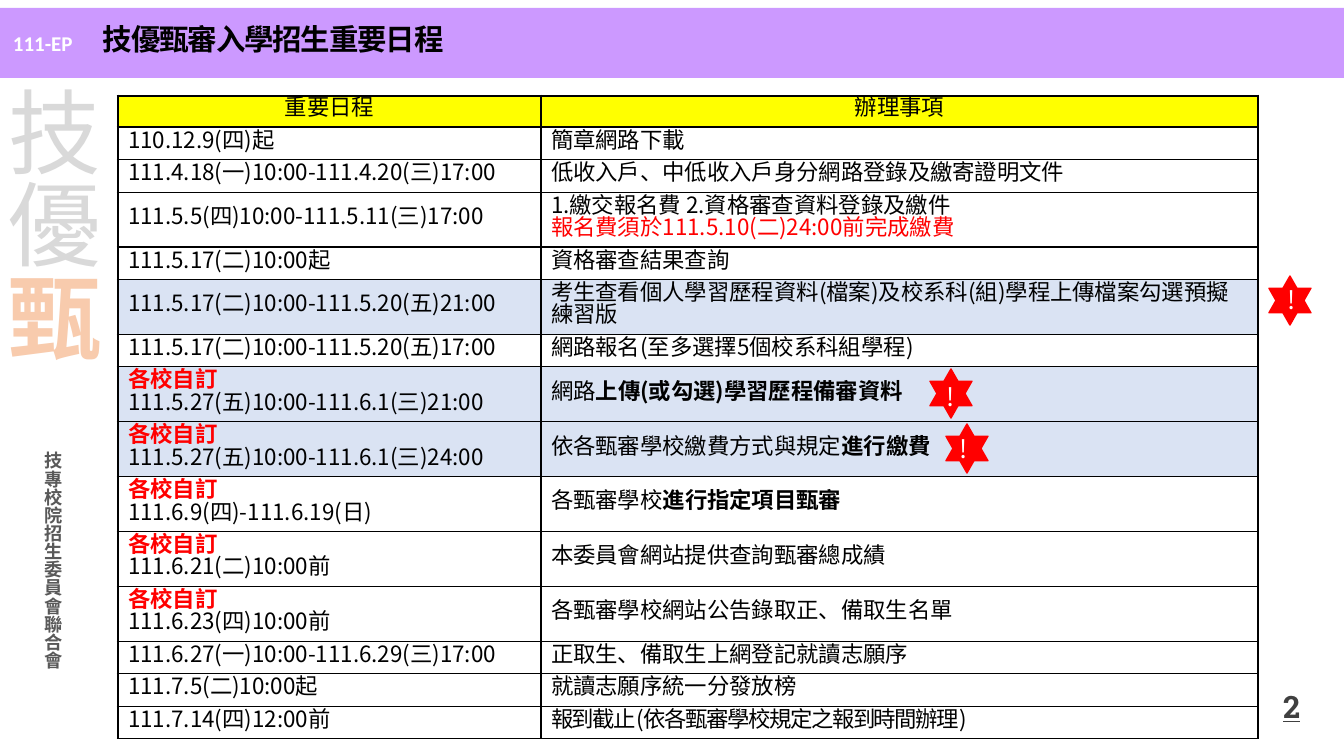
from pptx import Presentation
from pptx.dml.color import RGBColor
from pptx.enum.shapes import MSO_SHAPE as Shape
from pptx.enum.text import MSO_ANCHOR as Anchor, PP_ALIGN as Align
from pptx.oxml.ns import qn
from pptx.util import Emu, Pt
from lxml.etree import SubElement

PX = 914400 / 100.8
CJK = "Noto Sans CJK SC"
THEME = {
    "purple": "CC99FF", "yellow": "FFFF00", "white": "FFFFFF",
    "shaded": "DAE3F3", "red": "FF0000", "black": "000000",
    "thin": 1, "thick": 2.25,
    "text": {
        "code": dict(name="Calibri", size=Pt(15), bold=True, color="FFFFFF"),
        "title": dict(name=CJK, size=Pt(21), bold=True, color="000000", spacing=-80),
        "faded": dict(name=CJK, size=Pt(66), bold=False, color="D9D9D9"),
        "accent": dict(name=CJK, size=Pt(66), bold=True, color="F8CBAD"),
        "issuer": dict(name="Noto Sans CJK JP", size=Pt(13), bold=True, color="595959"),
        "number": dict(name="Roboto Slab", size=Pt(22), bold=True, underline=True,
                       color="404040"),
        "mark": dict(name=CJK, size=Pt(18), bold=False, color="FFFFFF"),
        "plain": dict(name=CJK, size=Pt(16), bold=False, color="000000"),
        "strong": dict(name=CJK, size=Pt(16), bold=True, color="000000"),
        "notice": dict(name=CJK, size=Pt(16), bold=False, color="FF0000"),
        "alert": dict(name=CJK, size=Pt(16), bold=True, color="FF0000"),
        "tight": dict(name=CJK, size=Pt(16), bold=False, color="000000", spacing=-100),
    },
}

# A paragraph is a list of (text, style) spans; a cell is a list of paragraphs.
HEADER = ("重要日程", "辦理事項")
SCHOOL_SET = [("各校自訂", "alert")]
SCHEDULE = [
    ("110.12.9(四)起", False, [[("簡章網路下載", "plain")]]),
    ("111.4.18(一)10:00-111.4.20(三)17:00", False,
     [[("低收入戶、中低收入戶身分網路登錄及繳寄證明文件", "plain")]]),
    ("111.5.5(四)10:00-111.5.11(三)17:00", False,
     [[("1.繳交報名費 2.資格審查資料登錄及繳件", "plain")],
      [("報名費須於111.5.10(二)24:00前完成繳費", "notice")]]),
    ("111.5.17(二)10:00起", False, [[("資格審查結果查詢", "plain")]]),
    ("111.5.17(二)10:00-111.5.20(五)21:00", False,
     [[("考生查看個人學習歷程資料(檔案)及校系科(組)學程上傳檔案勾選預擬練習版", "plain")]]),
    ("111.5.17(二)10:00-111.5.20(五)17:00", False,
     [[("網路報名(至多選擇5個校系科組學程)", "plain")]]),
    ("111.5.27(五)10:00-111.6.1(三)21:00", True,
     [[("網路", "plain"), ("上傳(或勾選)學習歷程備審資料", "strong")]]),
    ("111.5.27(五)10:00-111.6.1(三)24:00", True,
     [[("依各甄審學校繳費方式與規定", "plain"), ("進行繳費", "strong")]]),
    ("111.6.9(四)-111.6.19(日)", True,
     [[("各甄審學校", "plain"), ("進行指定項目甄審", "strong")]]),
    ("111.6.21(二)10:00前", True, [[("本委員會網站提供查詢甄審總成績", "plain")]]),
    ("111.6.23(四)10:00前", True, [[("各甄審學校網站公告錄取正、備取生名單", "plain")]]),
    ("111.6.27(一)10:00-111.6.29(三)17:00", False,
     [[("正取生、備取生上網登記就讀志願序", "plain")]]),
    ("111.7.5(二)10:00起", False, [[("就讀志願序統一分發放榜", "plain")]]),
    ("111.7.14(四)12:00前", False,
     [[("報到截止(依各甄審學校規定之報到時間辦理)", "tight")]]),
]
SHADED_ROWS = {5, 7, 8}
TWO_LINE_ROWS = {3, 5, 7, 8, 9, 10, 11}
FIRST_JUSTIFIED_ROW = 7
COLUMN_WIDTHS = (423, 717)
# Star left and top, then the offset of its exclamation mark.
STARS = [(930, 369, 7, 7), (946, 424, 4, 4), (1269, 276, 9, 3)]


def px(*lengths):
    return [Emu(round(length * PX)) for length in lengths]


def paint(fill, color):
    fill.solid()
    fill.fore_color.rgb = RGBColor.from_string(color)


def add_span(para, text, style):
    span = para.add_run()
    span.text = text
    values = dict(THEME["text"][style])
    span.font.color.rgb = RGBColor.from_string(values.pop("color"))
    spacing = values.pop("spacing", None)
    for key, value in values.items():
        setattr(span.font, key, value)
    properties = span.font._element
    if spacing:
        properties.set("spc", str(spacing))
    SubElement(properties, qn("a:ea")).set("typeface", values["name"])


def write(frame, paragraphs, **layout):
    """Fill a text frame; layout holds paragraph attributes."""
    for index, spans in enumerate(paragraphs):
        para = frame.add_paragraph() if index else frame.paragraphs[0]
        for key, value in layout.items():
            setattr(para, key, value)
        for text, style in spans:
            add_span(para, text, style)


def add_label(page, place, spans, anchor=Anchor.TOP, vertical=False, **layout):
    box = page.shapes.add_textbox(*px(*place))
    frame = box.text_frame
    frame.word_wrap = True
    frame.vertical_anchor = anchor
    if vertical:
        frame._txBody.bodyPr.set("vert", "eaVert")
    write(frame, [spans], **layout)
    return box


def add_block(page, preset, place, color, outlined=False):
    block = page.shapes.add_shape(preset, *px(*place))
    block.shadow.inherit = False
    paint(block.fill, color)
    if outlined:
        paint(block.line.fill, color)
        block.line.width = Pt(1)
    else:
        block.line.fill.background()


def add_star(page, left, top, mark_x, mark_y):
    add_block(page, Shape.STAR_6_POINT, (left, top, 42, 49), THEME["red"], outlined=True)
    add_label(page, (left + mark_x, top + mark_y, 21, 42), [("!", "mark")])


def set_borders(cell, widths):
    """Draw the left, right, top and bottom edges, ahead of the cell's fill."""
    properties = cell._tc.get_or_add_tcPr()
    for index, (side, width) in enumerate(zip("LRTB", widths)):
        edge = SubElement(properties, qn(f"a:ln{side}"), w=str(Pt(width)))
        fill = SubElement(edge, qn("a:solidFill"))
        SubElement(fill, qn("a:srgbClr"), val=THEME["black"])
        SubElement(edge, qn("a:prstDash"), val="solid")
        properties.insert(index, edge)


def fill_cell(cell, paragraphs, color, widths, **layout):
    cell.vertical_anchor = Anchor.MIDDLE
    write(cell.text_frame, paragraphs, **layout)
    paint(cell.fill, color)
    set_borders(cell, widths)


def add_schedule(page):
    row_count = len(SCHEDULE) + 1
    heights = [31] + [54 if row in TWO_LINE_ROWS else 32 for row in range(1, row_count)]
    place = px(118, 96, sum(COLUMN_WIDTHS), sum(heights))
    table = page.shapes.add_table(row_count, 2, *place).table
    table.horz_banding = False
    for column, width in zip(table.columns, px(*COLUMN_WIDTHS)):
        column.width = width
    for row, height in zip(table.rows, px(*heights)):
        row.height = height

    thin, thick = THEME["thin"], THEME["thick"]
    sides = ((thick, thin), (thin, thick))
    for column, heading in enumerate(HEADER):
        fill_cell(table.cell(0, column), [[(heading, "plain")]], THEME["yellow"],
                  (*sides[column], thick, thick),
                  alignment=Align.CENTER, line_spacing=Pt(15))
    for row, (date, school_set, task) in enumerate(SCHEDULE, start=1):
        when = [SCHOOL_SET] * school_set + [[(date, "plain")]]
        color = THEME["shaded" if row in SHADED_ROWS else "white"]
        task_align = Align.JUSTIFY if row >= FIRST_JUSTIFIED_ROW else Align.LEFT
        top = thick if row == 1 else thin
        for column, (content, align) in enumerate([(when, Align.LEFT), (task, task_align)]):
            fill_cell(table.cell(row, column), content, color,
                      (*sides[column], top, thin),
                      alignment=align, line_spacing=Pt(16))


def main():
    deck = Presentation()
    deck.slide_width, deck.slide_height = px(1344, 756)
    page = deck.slides.add_slide(deck.slide_layouts[6])

    add_block(page, Shape.RECTANGLE, (0, 8, 1344, 70), THEME["purple"])
    code = add_label(page, (3, 26, 117, 35), [("111-EP", "code")])
    paint(code.fill, THEME["purple"])
    add_label(page, (27, 442, 42, 258), [("技專校院招生委員會聯合會", "issuer")],
              vertical=True, alignment=Align.CENTER)
    add_label(page, (-20, 76, 132, 380), [("技優", "faded"), ("甄", "accent")],
              vertical=True)
    add_label(page, (1008, 686, 302, 40), [("2", "number")],
              anchor=Anchor.MIDDLE, alignment=Align.RIGHT)
    add_label(page, (93, 9, 907, 65), [("技優甄審入學招生重要日程", "title")],
              anchor=Anchor.MIDDLE, line_spacing=0.9)
    add_schedule(page)
    for star in STARS:
        add_star(page, *star)
    deck.save("out.pptx")


if __name__ == "__main__":
    main()
